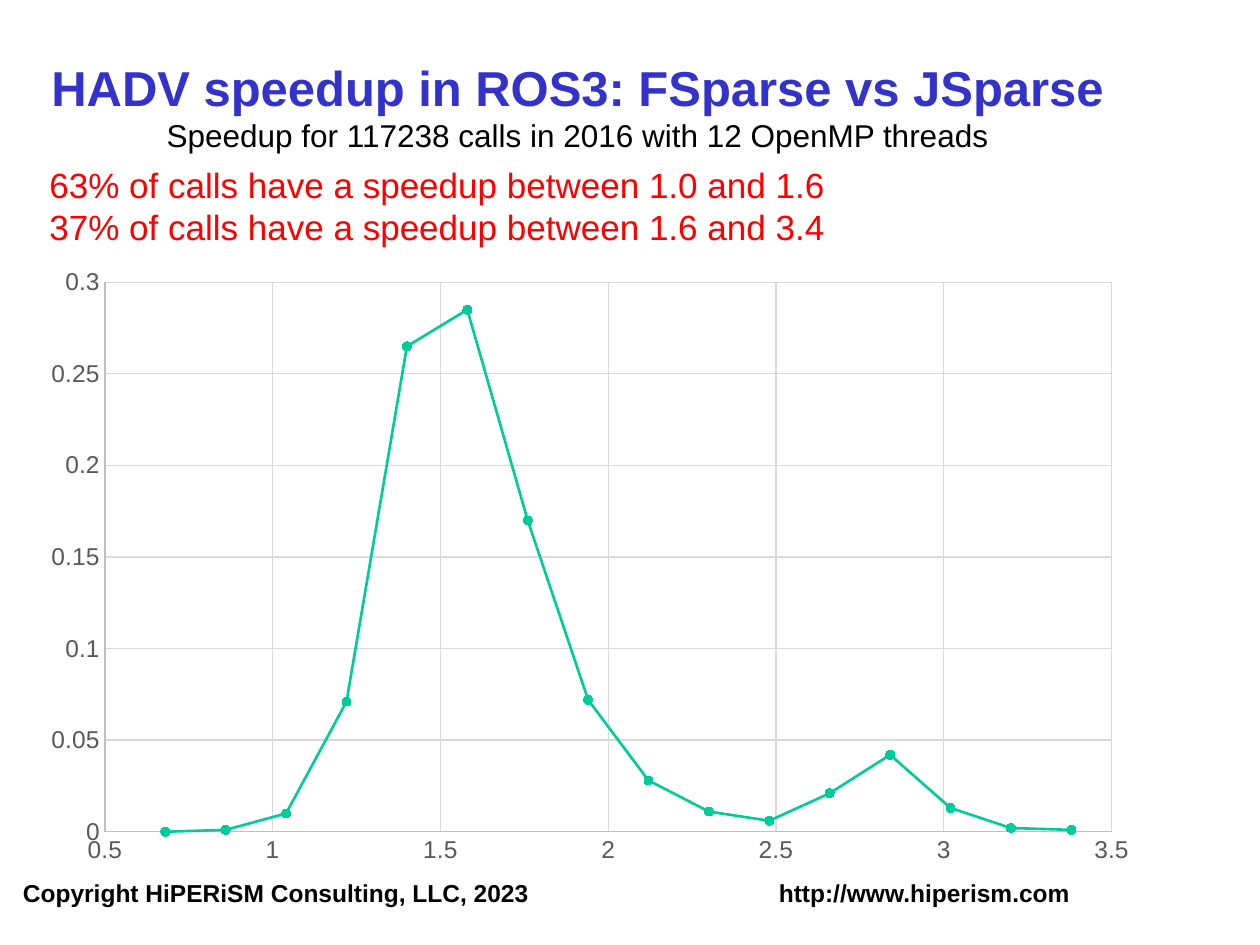
from dataclasses import dataclass

import lxml.etree
import pptx
import pptx.chart.data
import pptx.dml.color
import pptx.enum.chart
import pptx.enum.text
import pptx.oxml
import pptx.oxml.ns
import pptx.util

Pt = pptx.util.Pt
FONT = "Arial"
GREEN = "00CC99"
AXIS_TEXT = "595959"
AXIS_LINE = "BFBFBF"
GRID_LINE = "D9D9D9"


@dataclass
class Line:
    text: str
    size: float
    color: str
    bold: bool = False


@dataclass
class Frame:
    left: float
    top: float
    width: float
    height: float


@dataclass
class AxisScale:
    minimum: float
    maximum: float
    step: float


TITLE_FRAME = Frame(6, 27.5, 648, 86.5)
BODY_FRAME = Frame(21, 90, 618, 60)
CHART_FRAME = Frame(18.72, 153.4, 635, 344.2)
FOOTER_FRAME = Frame(6, 498, 648, 42)
URL_TAB = 432

TITLE_LINES = [
    Line("HADV speedup in ROS3: FSparse vs JSparse", 28, "3333CC", True),
    Line("Speedup for 117238 calls in 2016 with 12 OpenMP threads", 18, "000000"),
]
BODY_LINES = [
    Line("63% of calls have a speedup between 1.0 and 1.6", 20, "FF0000"),
    Line("37% of calls have a speedup between 1.6 and 3.4", 20, "FF0000"),
]
FOOTER_LINES = [
    Line("Copyright HiPERiSM Consulting, LLC, 2023\thttp://www.hiperism.com", 14, "000000", True),
]

FIRST_SPEEDUP = 0.68
SPEEDUP_STEP = 0.18
CALL_FRACTIONS = [0, 0.001, 0.01, 0.071, 0.265, 0.285, 0.17, 0.072,
                  0.028, 0.011, 0.006, 0.021, 0.042, 0.013, 0.002, 0.001]
PLOT_LAYOUT = {"x": 0.065, "y": 0.018, "w": 0.906, "h": 0.917}


def rgb(color: str) -> pptx.dml.color.RGBColor:
    return pptx.dml.color.RGBColor.from_string(color)


def place(shape, frame: Frame) -> None:
    shape.left, shape.top = Pt(frame.left), Pt(frame.top)
    shape.width, shape.height = Pt(frame.width), Pt(frame.height)


def write_lines(shape, lines: list[Line]):
    text_frame = shape.text_frame
    text_frame.word_wrap = True
    text_frame.auto_size = pptx.enum.text.MSO_AUTO_SIZE.NONE
    paragraph = text_frame.paragraphs[0]
    for index, line in enumerate(lines):
        if index:
            paragraph.add_line_break()
        run = paragraph.add_run()
        run.text = line.text
        run.font.name = FONT
        run.font.size = Pt(line.size)
        run.font.bold = line.bold
        run.font.color.rgb = rgb(line.color)
    return paragraph


def add_title(slide) -> None:
    shape = slide.shapes.title
    place(shape, TITLE_FRAME)
    paragraph = write_lines(shape, TITLE_LINES)
    paragraph.alignment = pptx.enum.text.PP_ALIGN.CENTER
    shape.text_frame.vertical_anchor = pptx.enum.text.MSO_ANCHOR.MIDDLE
    shape.text_frame.margin_bottom = Pt(24.5)


def add_body(slide) -> None:
    shape = slide.placeholders[1]
    place(shape, BODY_FRAME)
    paragraph = write_lines(shape, BODY_LINES)
    properties = paragraph._p.get_or_add_pPr()
    properties.set("marL", "0")
    properties.set("indent", "0")
    lxml.etree.SubElement(properties, pptx.oxml.ns.qn("a:buNone"))
    paragraph.space_before = Pt(0)
    paragraph.line_spacing = Pt(24)


def add_footer(slide) -> None:
    frame = FOOTER_FRAME
    shape = slide.shapes.add_textbox(
        Pt(frame.left), Pt(frame.top), Pt(frame.width), Pt(frame.height))
    paragraph = write_lines(shape, FOOTER_LINES)
    properties = paragraph._p.get_or_add_pPr()
    tabs = lxml.etree.SubElement(properties, pptx.oxml.ns.qn("a:tabLst"))
    lxml.etree.SubElement(tabs, pptx.oxml.ns.qn("a:tab"), pos=str(Pt(URL_TAB)), algn="l")


def style_line(line, color: str, width: float) -> None:
    line.color.rgb = rgb(color)
    line.width = Pt(width)


def style_axis(axis, scale: AxisScale) -> None:
    axis.minimum_scale = scale.minimum
    axis.maximum_scale = scale.maximum
    axis.major_unit = scale.step
    axis.major_tick_mark = pptx.enum.chart.XL_TICK_MARK.NONE
    axis.minor_tick_mark = pptx.enum.chart.XL_TICK_MARK.NONE
    axis.has_major_gridlines = True
    style_line(axis.major_gridlines.format.line, GRID_LINE, 0.75)
    style_line(axis.format.line, AXIS_LINE, 0.75)
    labels = axis.tick_labels
    labels.number_format = "General"
    labels.number_format_is_linked = False
    labels.font.name = FONT
    labels.font.size = Pt(14)
    labels.font.color.rgb = rgb(AXIS_TEXT)


def set_plot_layout(chart) -> None:
    plot_area = chart._chartSpace.chart.plotArea
    for old_layout in plot_area.findall(pptx.oxml.ns.qn("c:layout")):
        plot_area.remove(old_layout)
    settings = {"layoutTarget": "inner", "xMode": "edge", "yMode": "edge", **PLOT_LAYOUT}
    entries = "".join(f'<c:{name} val="{value}"/>' for name, value in settings.items())
    layout = pptx.oxml.parse_xml(
        f'<c:layout {pptx.oxml.ns.nsdecls("c")}>'
        f"<c:manualLayout>{entries}</c:manualLayout></c:layout>")
    plot_area.insert(0, layout)


def add_speedup_chart(slide) -> None:
    data = pptx.chart.data.XyChartData()
    points = data.add_series("Series 1")
    for index, fraction in enumerate(CALL_FRACTIONS):
        points.add_data_point(round(FIRST_SPEEDUP + index * SPEEDUP_STEP, 2), fraction)
    frame = CHART_FRAME
    chart = slide.shapes.add_chart(
        pptx.enum.chart.XL_CHART_TYPE.XY_SCATTER_SMOOTH,
        Pt(frame.left), Pt(frame.top), Pt(frame.width), Pt(frame.height), data).chart
    chart.has_title = False
    chart.has_legend = False
    chart.font.name = FONT
    chart.font.size = Pt(10)
    chart.font.color.rgb = rgb("000000")
    chart.plots[0].vary_by_categories = False
    style_axis(chart.category_axis, AxisScale(0.5, 3.5, 0.5))
    style_axis(chart.value_axis, AxisScale(0, 0.3, 0.05))
    set_plot_layout(chart)
    series = chart.plots[0].series[0]
    series.smooth = True
    style_line(series.format.line, GREEN, 1.5)
    series.marker.style = pptx.enum.chart.XL_MARKER_STYLE.CIRCLE
    series.marker.size = 5
    series.marker.format.fill.solid()
    series.marker.format.fill.fore_color.rgb = rgb(GREEN)
    style_line(series.marker.format.line, GREEN, 0.75)


def main() -> None:
    presentation = pptx.Presentation()
    presentation.slide_width, presentation.slide_height = Pt(720), Pt(540)
    slide = presentation.slides.add_slide(presentation.slide_layouts[1])
    add_footer(slide)
    add_title(slide)
    add_body(slide)
    add_speedup_chart(slide)
    presentation.save("out.pptx")


if __name__ == "__main__":
    main()
